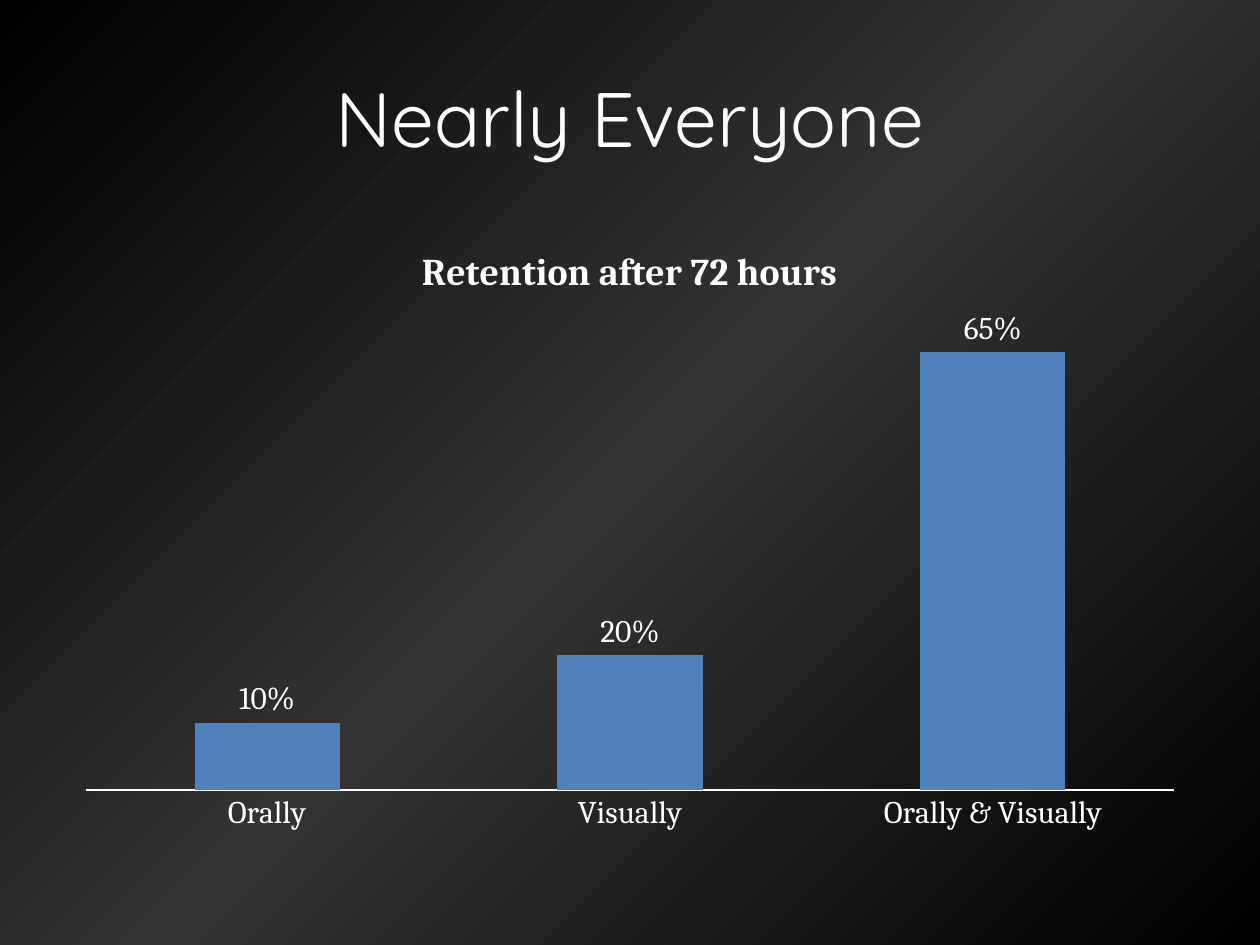
from copy import deepcopy
from dataclasses import dataclass

from pptx import Presentation
from pptx import util as u
from pptx.chart.data import CategoryChartData
from pptx.dml.color import RGBColor
from pptx.enum import chart as ch
from pptx.enum import text


@dataclass(frozen=True)
class Theme:
    ink: str = "FFFFFF"
    bar: str = "4F81BD"
    backdrop: tuple = ("000000", "333333", "000000")
    heading_font: str = "Quicksand"
    chart_font: str = "Cambria"
    heading_size: float = 44
    chart_title_size: float = 21.6
    label_size: float = 18


@dataclass(frozen=True)
class Box:
    left: float
    top: float
    width: float
    height: float

    def place(self, prs) -> dict:
        w, h = prs.slide_width, prs.slide_height
        return {
            "left": int(self.left * w),
            "top": int(self.top * h),
            "width": int(self.width * w),
            "height": int(self.height * h),
        }


@dataclass(frozen=True)
class Retention:
    mode: str
    share: float


THEME = Theme()
TITLE_BOX = Box(0.05, 0.04, 0.9, 1 / 6)
CHART_BOX = Box(0.05, 0.7 / 3, 0.9, 0.66)
CHART_TITLE = "Retention after 72 hours"
RESULTS = [
    Retention("Orally", 0.1),
    Retention("Visually", 0.2),
    Retention("Orally & Visually", 0.65),
]


def rgb(value: str) -> RGBColor:
    return RGBColor.from_string(value)


def apply(target, values: dict) -> None:
    for name, value in values.items():
        setattr(target, name, value)


def style_font(font, name: str, size: float, bold: bool = False) -> None:
    apply(font, {"name": name, "size": u.Pt(size), "bold": bold})
    font.color.rgb = rgb(THEME.ink)


def paint_background(s) -> None:
    fill = s.background.fill
    fill.gradient()
    fill.gradient_angle = 315
    stops = s.element.xpath(".//p:bg//a:gsLst")[0]
    stops.insert(1, deepcopy(stops[0]))
    last = len(THEME.backdrop) - 1
    for i, (stop, color) in enumerate(zip(fill.gradient_stops, THEME.backdrop)):
        stop.position = i / last
        stop.color.rgb = rgb(color)


def add_heading(prs, s) -> None:
    sp = s.shapes.title
    apply(sp, TITLE_BOX.place(prs))
    tf = sp.text_frame
    apply(tf, {"word_wrap": True, "vertical_anchor": text.MSO_ANCHOR.MIDDLE})
    p = tf.paragraphs[0]
    p.alignment = text.PP_ALIGN.CENTER
    r = p.add_run()
    r.text = "Nearly Everyone"
    style_font(r.font, THEME.heading_font, THEME.heading_size)


def add_retention_chart(prs, s) -> None:
    data = CategoryChartData(number_format="0%")
    data.categories = [result.mode for result in RESULTS]
    data.add_series(CHART_TITLE, [result.share for result in RESULTS])
    box = CHART_BOX.place(prs)
    chart = s.shapes.add_chart(
        ch.XL_CHART_TYPE.COLUMN_CLUSTERED,
        box["left"], box["top"], box["width"], box["height"], data,
    ).chart
    style_font(chart.font, THEME.chart_font, THEME.label_size)
    apply(chart, {"has_legend": False, "has_title": True})

    p = chart.chart_title.text_frame.paragraphs[0]
    r = p.add_run()
    r.text = CHART_TITLE
    style_font(r.font, THEME.chart_font, THEME.chart_title_size, bold=True)
    chart.chart_title.include_in_layout = False

    none = ch.XL_TICK_MARK.NONE
    axis = chart.category_axis
    apply(axis, {"major_tick_mark": none, "minor_tick_mark": none})
    axis.format.line.color.rgb = rgb(THEME.ink)
    apply(chart.value_axis, {
        "visible": False,
        "has_major_gridlines": False,
        "minimum_scale": 0,
        "maximum_scale": 0.7,
    })

    plot = chart.plots[0]
    apply(plot, {
        "gap_width": 150,
        "overlap": -25,
        "vary_by_categories": False,
        "has_data_labels": True,
    })
    apply(plot.data_labels, {
        "show_value": True,
        "number_format": "0%",
        "number_format_is_linked": False,
        "position": ch.XL_LABEL_POSITION.OUTSIDE_END,
    })
    style_font(plot.data_labels.font, THEME.chart_font, THEME.label_size)
    fill = plot.series[0].format.fill
    fill.solid()
    fill.fore_color.rgb = rgb(THEME.bar)


def main() -> None:
    prs = Presentation()
    apply(prs, {"slide_width": u.Inches(10), "slide_height": u.Inches(7.5)})
    s = prs.slides.add_slide(prs.slide_layouts.get_by_name("Title Only"))
    paint_background(s)
    add_heading(prs, s)
    add_retention_chart(prs, s)
    prs.save("out.pptx")


if __name__ == "__main__":
    main()
